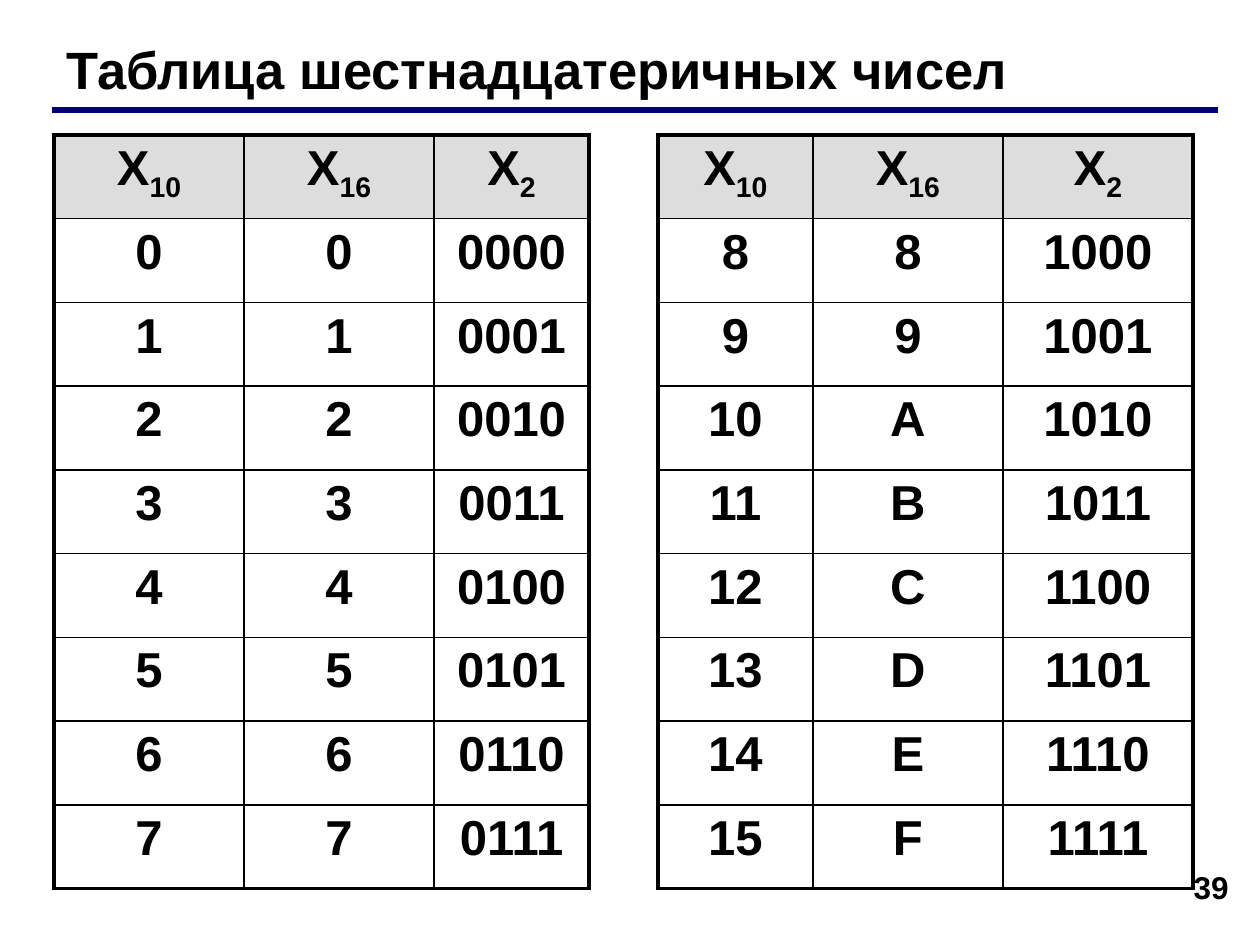
import lxml.etree
import pptx
import pptx.dml.color
import pptx.enum.shapes
import pptx.enum.text
import pptx.oxml.ns
import pptx.util

PX = 914400 / 126
qn = pptx.oxml.ns.qn
ALIGN = pptx.enum.text.PP_ALIGN


def style(paragraph, size, alignment):
    paragraph.alignment = alignment
    for run in paragraph.runs:
        run.font.name = "Arial"
        run.font.size = pptx.util.Pt(size)
        run.font.bold = True
        run.font.color.rgb = pptx.dml.color.RGBColor.from_string("000000")


def set_border(cell, side, points):
    """Draw one cell side in black; zero points means no line."""
    properties = cell._tc.get_or_add_tcPr()
    line = lxml.etree.SubElement(properties, qn(f"a:ln{side}"), w=str(int(points * 12700)))
    if points:
        fill = lxml.etree.SubElement(line, qn("a:solidFill"))
        lxml.etree.SubElement(fill, qn("a:srgbClr"), val="000000")
    else:
        lxml.etree.SubElement(line, qn("a:noFill"))


presentation = pptx.Presentation()
presentation.slide_width = round(1260 * PX)
presentation.slide_height = round(945 * PX)
slide = presentation.slides.add_slide(presentation.slide_layouts[6])

# Page number and title
texts = [
    ("39", 948, 862, 293, 65, 18, ALIGN.RIGHT),
    ("Таблица шестнадцатеричных чисел", 54, 31, 1121, 76, 30, ALIGN.LEFT),
]
for text, left, top, width, height, size, alignment in texts:
    box = slide.shapes.add_textbox(*(round(value * PX) for value in (left, top, width, height)))
    box.text_frame.word_wrap = True
    box.text_frame.text = text
    style(box.text_frame.paragraphs[0], size, alignment)

# Rule under the title
rule = slide.shapes.add_connector(
    pptx.enum.shapes.MSO_CONNECTOR.STRAIGHT,
    *(round(value * PX) for value in (52, 110, 1218, 110)),
)
rule.line.color.rgb = pptx.dml.color.RGBColor.from_string("000080")
rule.line.width = pptx.util.Pt(3)
lxml.etree.SubElement(rule._element.spPr, qn("a:effectLst"))

# Two blocks of eight numbers, separated by an empty column
column_widths = [190, 190, 155, 69, 155, 190, 190]
row_count = 9
gap_column = 3
table_height = 754
frame = slide.shapes.add_table(
    row_count, len(column_widths),
    *(round(value * PX) for value in (54, 135, sum(column_widths), table_height)),
)
table = frame.table
table.first_row = False
table.horz_banding = False
for column, width in zip(table.columns, column_widths):
    column.width = round(width * PX)
for row in table.rows:
    row.height = round(table_height * PX / row_count)

for row_index in range(row_count):
    for column_index in range(len(column_widths)):
        cell = table.cell(row_index, column_index)
        is_gap = column_index == gap_column
        is_header = row_index == 0

        set_border(cell, "L", 2.25 if column_index in (0, 3, 4) else 1)
        set_border(cell, "R", 2.25 if column_index in (2, 3, 6) else 1)
        set_border(cell, "T", 0 if is_gap else 2.25 if is_header else 1)
        set_border(cell, "B", 0 if is_gap else 2.25 if row_index == row_count - 1 else 1)

        if is_header and not is_gap:
            cell.fill.solid()
            cell.fill.fore_color.rgb = pptx.dml.color.RGBColor.from_string("DDDDDD")
        else:
            cell.fill.background()
        if is_gap:
            continue

        paragraph = cell.text_frame.paragraphs[0]
        position = column_index % 4
        if is_header:
            paragraph.text = "X"
            base = paragraph.add_run()
            base.text = ("10", "16", "2")[position]
            base.font._element.set("baseline", "-25000")
        else:
            number = row_index - 1 + 8 * (column_index // 4)
            paragraph.text = (f"{number}", f"{number:X}", f"{number:04b}")[position]
        style(paragraph, 28, ALIGN.CENTER)

presentation.save("out.pptx")
